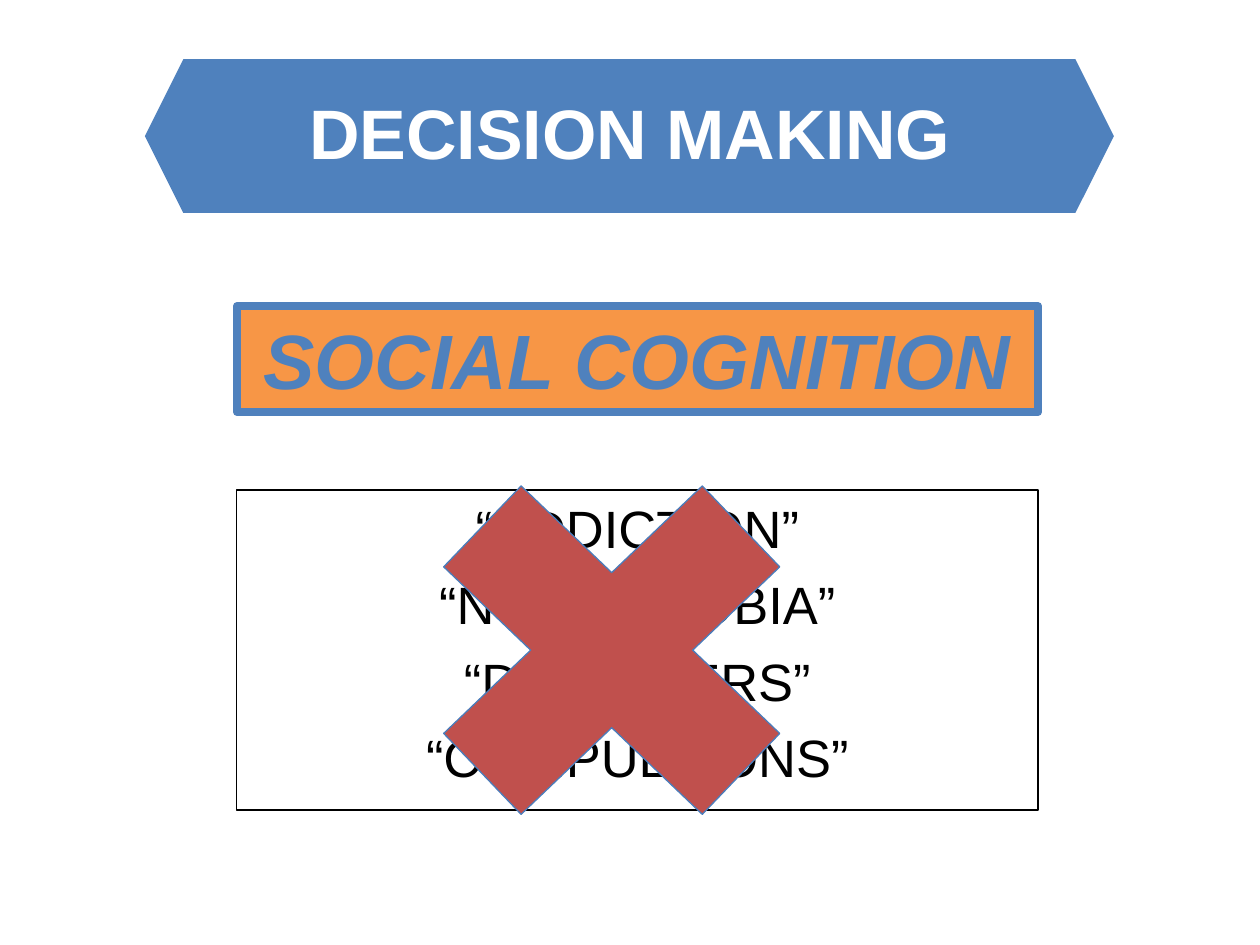
from dataclasses import dataclass
from typing import Optional

from pptx import Presentation
from pptx.dml.color import RGBColor
from pptx.enum.shapes import MSO_SHAPE
from pptx.enum.text import MSO_ANCHOR, PP_ALIGN
from pptx.util import Inches, Pt

WIDE, HIGH = Inches(10), Inches(7.5)
WHITE = RGBColor(0xFF, 0xFF, 0xFF)
BLACK = RGBColor(0, 0, 0)
BLUE = RGBColor(0x4F, 0x81, 0xBD)
EDGE = RGBColor(0x4A, 0x7D, 0xBB)
ORANGE = RGBColor(0xF7, 0x96, 0x46)
RED = RGBColor(0xC0, 0x50, 0x4D)
TERMS = ["“ADDICTION”", "“NOMOPHOBIA”", "“DISORDERS”", "“COMPULSIONS”"]


@dataclass(frozen=True)
class Area:
    """Place and size in percent of the slide."""
    left: float
    top: float
    width: float
    height: float

    def box(self) -> tuple[int, int, int, int]:
        """Return left, top, width and height as lengths."""
        sides = (self.left, self.top, self.width, self.height)
        return tuple(int(part * full / 100)
                     for part, full in zip(sides, (WIDE, HIGH, WIDE, HIGH)))


BANNER = Area(11.5, 6.27, 76.9, 16.27)
TITLE = Area(0, 8.8, 100, 10.27)
TOPIC = Area(18.8, 32.4, 63.6, 11.2)
LIST = Area(18.8, 51.87, 63.6, 33.87)
CROSS = Area(28.8, 43.6, 39.5, 50.4)


def draw(slide, kind: MSO_SHAPE, area: Area, fill: Optional[RGBColor] = None,
         line: Optional[RGBColor] = None, weight: float = 0.75):
    """Add a flat preset shape."""
    shape = slide.shapes.add_shape(kind, *area.box())
    shape.shadow.inherit = False
    if fill is None:
        shape.fill.background()
    else:
        shape.fill.solid()
        shape.fill.fore_color.rgb = fill
    if line is None:
        shape.line.fill.background()
    else:
        shape.line.color.rgb = line
        shape.line.width = Pt(weight)
    return shape


def write(shape, lines: list[str], *, size: float, color: RGBColor,
          bold: bool = False, italic: bool = False, gap: float = 0,
          anchor: MSO_ANCHOR = MSO_ANCHOR.MIDDLE) -> None:
    """Fill a shape with centred paragraphs."""
    frame = shape.text_frame
    frame.word_wrap = True
    frame.vertical_anchor = anchor
    for index, line in enumerate(lines):
        para = frame.add_paragraph() if index else frame.paragraphs[0]
        para.alignment = PP_ALIGN.CENTER
        if index:
            para.space_before = Pt(gap)
        run = para.add_run()
        run.text = line
        font = run.font
        font.name, font.size = "Arial", Pt(size)
        font.bold, font.italic = bold, italic
        font.color.rgb = color


def main() -> None:
    """Build and save the slide."""
    deck = Presentation()
    deck.slide_width, deck.slide_height = WIDE, HIGH
    slide = deck.slides.add_slide(deck.slide_layouts[6])

    draw(slide, MSO_SHAPE.HEXAGON, BANNER, fill=BLUE)
    title = slide.shapes.add_textbox(*TITLE.box())
    write(title, ["DECISION MAKING"], size=40, color=WHITE, bold=True)

    terms = draw(slide, MSO_SHAPE.RECTANGLE, LIST, line=BLACK)
    write(terms, TERMS, size=30, color=BLACK, gap=7.5, anchor=MSO_ANCHOR.TOP)

    topic = draw(slide, MSO_SHAPE.RECTANGLE, TOPIC, ORANGE, BLUE, 4.5)
    write(topic, ["SOCIAL COGNITION"], size=44, color=BLUE, bold=True, italic=True)

    draw(slide, MSO_SHAPE.MATH_MULTIPLY, CROSS, fill=RED, line=EDGE)
    deck.save("out.pptx")


if __name__ == "__main__":
    main()
